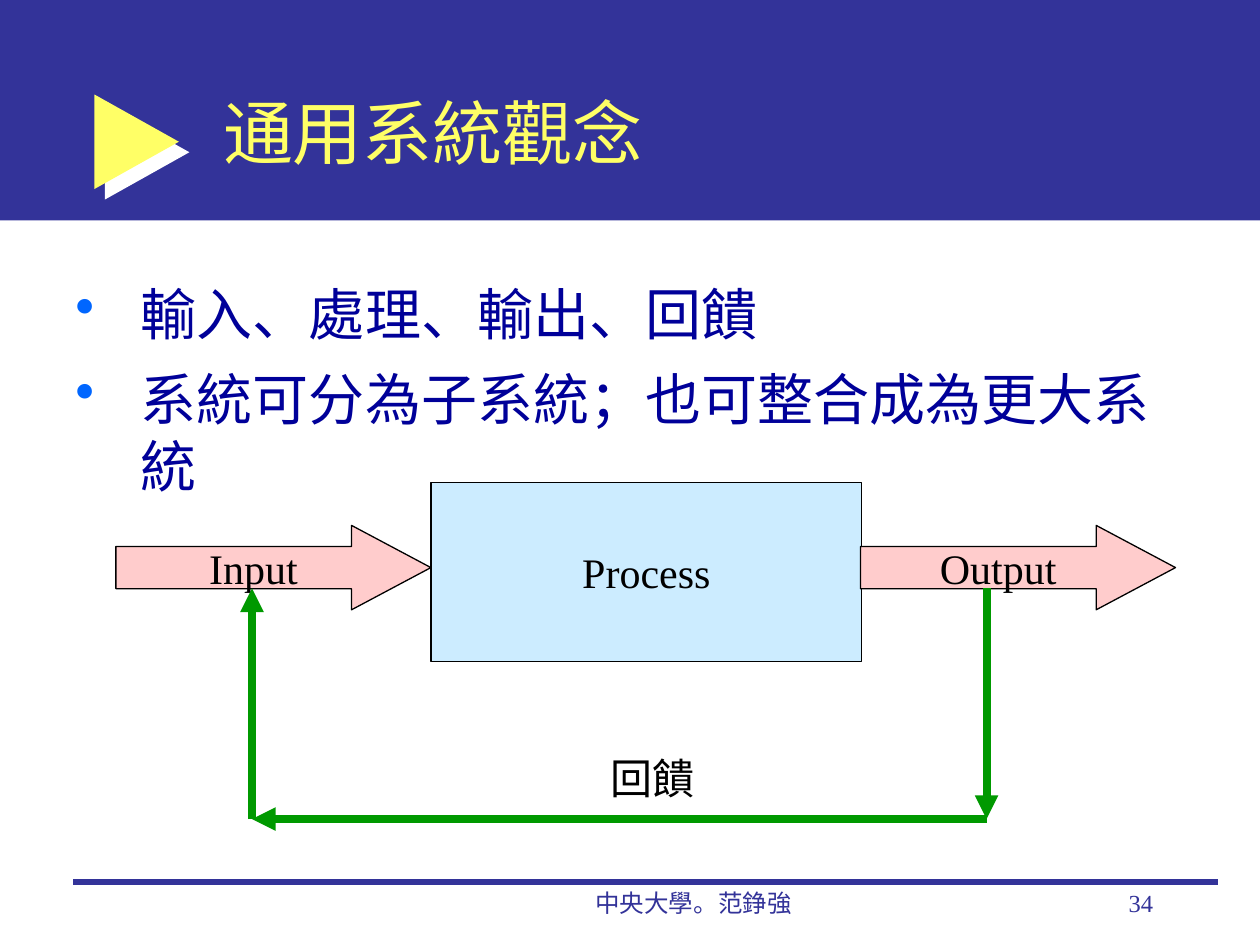
from itertools import pairwise

from lxml.etree import SubElement
from pptx import Presentation
from pptx.dml.color import RGBColor
from pptx.enum.shapes import MSO_CONNECTOR, MSO_SHAPE
from pptx.enum.text import MSO_ANCHOR, PP_ALIGN
from pptx.oxml import parse_xml
from pptx.oxml.ns import nsdecls, qn
from pptx.util import Inches, Pt

# Content: positions are left, top, width, height in inches
TITLE = "通用系統觀念"
BULLETS = ["輸入、處理、輸出、回饋", "系統可分為子系統；也可整合成為更大系統"]
BLOCKS = [
    ("Process", MSO_SHAPE.RECTANGLE, (3.42, 3.83, 3.42, 1.42), "CCECFF"),
    ("Input", MSO_SHAPE.RIGHT_ARROW, (0.92, 4.17, 2.5, 0.67), "FFCCCC"),
    ("Output", MSO_SHAPE.RIGHT_ARROW, (6.83, 4.17, 2.5, 0.67), "FFCCCC"),
]
FEEDBACK_PATH = [(7.83, 4.67), (7.83, 6.5), (2, 6.5), (2, 4.67)]
LABELS = [
    ("中央大學。范錚強", (3.92, 7, 3.17, 0.5), dict(size=14, color="333399", align=PP_ALIGN.CENTER)),
    ("34", (7.17, 7, 2.08, 0.5), dict(size=14, color="333399", align=PP_ALIGN.RIGHT)),
    ("回饋", (4.75, 5.92, 0.87, 0.5), dict(wrap=False)),
]
NAVY, YELLOW, GREEN = "333399", "FFFF66", "009900"


def rgb(value):
    return RGBColor.from_string(value)


def box(position):
    return [Inches(length) for length in position]


def add_bullet(paragraph, color, indent):
    properties = paragraph._p.get_or_add_pPr()
    properties.set("marL", str(Inches(indent)))
    properties.set("indent", str(-Inches(indent)))
    bullet_color = SubElement(properties, qn("a:buClr"))
    SubElement(bullet_color, qn("a:srgbClr")).set("val", color)
    SubElement(properties, qn("a:buChar")).set("char", "•")


def write(shape, lines, size=24, color="000000", font="Times New Roman",
          align=PP_ALIGN.LEFT, anchor=MSO_ANCHOR.TOP, wrap=True, bullet=None, gap=0):
    frame = shape.text_frame
    frame.word_wrap = wrap
    frame.vertical_anchor = anchor
    frame.text = "\n".join(lines)
    for index, paragraph in enumerate(frame.paragraphs):
        if bullet:
            add_bullet(paragraph, bullet, 0.52)
        paragraph.alignment = align
        if index:
            paragraph.space_before = Pt(gap)
        for run in paragraph.runs:
            run.font.size = Pt(size)
            run.font.name = font
            run.font.color.rgb = rgb(color)


def add_block(slide, kind, position, fill, line=None):
    shape = slide.shapes.add_shape(kind, *box(position))
    shape.shadow.inherit = False
    shape.fill.solid()
    shape.fill.fore_color.rgb = rgb(fill)
    if line:
        shape.line.color.rgb = rgb(line)
        shape.line.width = Pt(0.75)
    else:
        shape.line.fill.background()
    return shape


def add_line(slide, start, end, color, width, arrow=False):
    line = slide.shapes.add_connector(MSO_CONNECTOR.STRAIGHT, *box(start + end))
    line.line.color.rgb = rgb(color)
    line.line.width = Pt(width)
    if arrow:
        SubElement(line.line._get_or_add_ln(), qn("a:tailEnd")).set("type", "triangle")
    SubElement(line._element.spPr, qn("a:effectLst"))


def add_hard_shadow(shape, color, distance):
    effects = shape._element.spPr.find(qn("a:effectLst"))
    effects.append(parse_xml(
        f'<a:outerShdw {nsdecls("a")} dist="{Pt(distance)}" dir="2700000" algn="ctr" '
        f'rotWithShape="0"><a:srgbClr val="{color}"/></a:outerShdw>'))


def main():
    presentation = Presentation()
    presentation.slide_width, presentation.slide_height = Inches(10), Inches(7.5)
    slide = presentation.slides.add_slide(presentation.slide_layouts[5])

    # Header band, marker and footer rule
    add_block(slide, MSO_SHAPE.RECTANGLE, (0, 0, 10, 1.75), NAVY)
    marker = add_block(slide, MSO_SHAPE.RIGHT_ARROW, (0.75, 0.75, 0.67, 0.75), YELLOW)
    marker.adjustments[0], marker.adjustments[1] = 0.38, 1
    add_hard_shadow(marker, "FFFFFF", 8.5)
    add_line(slide, (0.58, 7), (9.67, 7), NAVY, 3)

    # Title, brought in front of the band
    title = slide.shapes.title
    title._element.getparent().append(title._element)
    title.left, title.top, title.width, title.height = box((1.67, 0.42, 7.58, 1.25))
    write(title, [TITLE], size=40, color=YELLOW, font="Arial", anchor=MSO_ANCHOR.MIDDLE)

    # Bullets
    body = slide.shapes.add_textbox(*box((0.5, 2.17, 9.15, 4.5)))
    write(body, BULLETS, size=32, color="000099", font="Arial", bullet="0066FF", gap=10)

    # Process diagram with its feedback loop
    for text, kind, position, fill in BLOCKS:
        block = add_block(slide, kind, position, fill, line="000000")
        if kind == MSO_SHAPE.RIGHT_ARROW:
            block.adjustments[1] = 0.94
        write(block, [text], align=PP_ALIGN.CENTER, anchor=MSO_ANCHOR.MIDDLE, wrap=False)
    for start, end in pairwise(FEEDBACK_PATH):
        add_line(slide, start, end, GREEN, 4.5, arrow=True)

    # Footer texts and feedback label
    for text, position, style in LABELS:
        write(slide.shapes.add_textbox(*box(position)), [text], **style)

    presentation.save("out.pptx")


if __name__ == "__main__":
    main()
